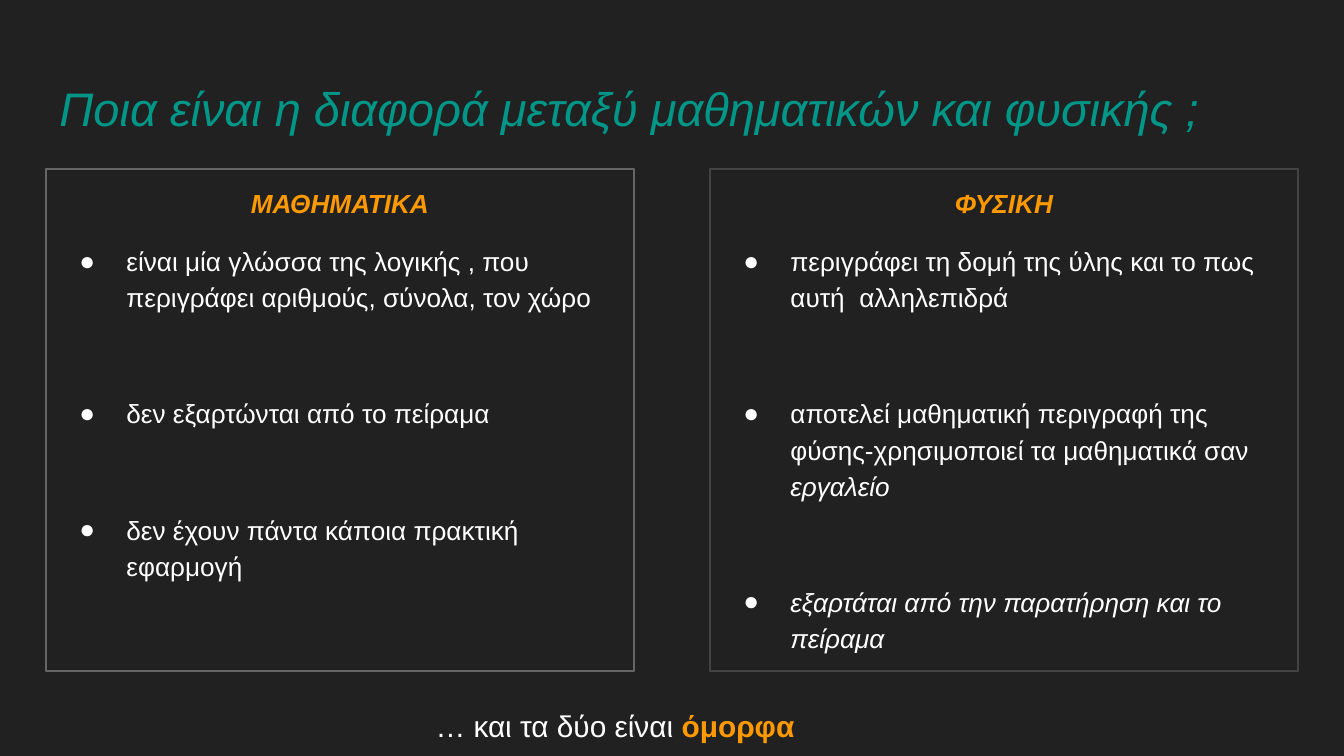
from pptx import Presentation
from pptx.dml.color import RGBColor
from pptx.enum.text import MSO_ANCHOR, MSO_AUTO_SIZE, PP_ALIGN
from pptx.oxml.ns import qn
from pptx.util import Pt
from lxml import etree

CENTER, LEFT = PP_ALIGN.CENTER, PP_ALIGN.LEFT
TOP, NO_FIT = MSO_ANCHOR.TOP, MSO_AUTO_SIZE.NONE
PX = 914400 / 134.4  # EMU per px
COLORS = {"bg": "212121", "title": "009688", "accent": "FF9900", "text": "FFFFFF",
          "math": "666666", "physics": "434343"}


def place(s, x, y, w, h):
    """Set position in px, and the shared text frame settings."""
    s.left, s.top, s.width, s.height = (round(v * PX) for v in (x, y, w, h))
    tf = s.text_frame
    tf.word_wrap, tf.auto_size, tf.vertical_anchor = True, NO_FIT, TOP
    tf.margin_left = tf.margin_right = tf.margin_top = tf.margin_bottom = round(13.44 * PX)
    return tf


def style(r, size, color, bold=False, italic=False):
    r.font.name, r.font.size = "Arial", Pt(size)
    r.font.bold, r.font.italic = bold, italic
    r.font.color.rgb = RGBColor.from_string(COLORS[color])


prs = Presentation()
prs.slide_width, prs.slide_height = round(1344 * PX), round(756 * PX)
slide = prs.slides.add_slide(prs.slide_layouts[3])
slide.background.fill.solid()
slide.background.fill.fore_color.rgb = RGBColor.from_string(COLORS["bg"])

# Title
tf = place(slide.shapes.title, 46, 66, 1252, 84)
tf.text = "Ποια είναι η διαφορά μεταξύ μαθηματικών και φυσικής ;"
tf.paragraphs[0].alignment = LEFT
style(tf.paragraphs[0].runs[0], 25.2, "title", italic=True)

# Two framed columns: each bullet is a list of (text, italic) runs
columns = [
    (1, 46, "math", "ΜΑΘΗΜΑΤΙΚΑ", [
        [("είναι μία γλώσσα της λογικής , που περιγράφει αριθμούς, σύνολα, τον χώρο", False)],
        [("δεν εξαρτώνται από το πείραμα", False)],
        [("δεν έχουν πάντα κάποια πρακτική εφαρμογή", False)],
    ]),
    (2, 710, "physics", "ΦΥΣΙΚΗ", [
        [("περιγράφει τη δομή της ύλης και το πως αυτή  αλληλεπιδρά", False)],
        [("αποτελεί μαθηματική περιγραφή της φύσης-χρησιμοποιεί τα μαθηματικά σαν ", False),
         ("εργαλείο", True)],
        [("εξαρτάται από την παρατήρηση και το πείραμα", True)],
    ]),
]
for idx, x, border, heading, bullets in columns:
    s = slide.placeholders[idx]
    tf = place(s, x, 169, 588, 502)
    s.line.color.rgb = RGBColor.from_string(COLORS[border])
    s.line.width = Pt(0.75)

    # Heading without bullet
    tf.text = heading
    p = tf.paragraphs[0]
    p.alignment, p.line_spacing, p.space_before = CENTER, 1.15, Pt(0)
    pPr = p._p.get_or_add_pPr()
    pPr.set("marL", "0")
    pPr.set("indent", "0")
    etree.SubElement(pPr, qn("a:buNone"))
    style(p.runs[0], 14, "accent", bold=True, italic=True)

    # Bullets, widely spaced after the first
    for i, runs in enumerate(bullets):
        p = tf.add_paragraph()
        p.line_spacing, p.space_before = 1.15, Pt(43 if i else 12)
        pPr = p._p.get_or_add_pPr()
        pPr.set("marL", str(round(67 * PX)))
        pPr.set("indent", str(round(-47 * PX)))
        clr = etree.SubElement(pPr, qn("a:buClr"))
        etree.SubElement(clr, qn("a:srgbClr"), val=COLORS["text"])
        etree.SubElement(pPr, qn("a:buFont"), typeface="Arial")
        etree.SubElement(pPr, qn("a:buChar"), char="●")
        for text, italic in runs:
            r = p.add_run()
            r.text = text
            style(r, 14, "text", italic=italic)

# Closing line
tf = place(slide.shapes.add_textbox(0, 0, 0, 0), 180, 694, 870, 63)
p = tf.paragraphs[0]
p.alignment = CENTER
for text, color, bold in [("… και τα δύο είναι ", "text", False), ("όμορφα", "accent", True)]:
    r = p.add_run()
    r.text = text
    style(r, 16, color, bold=bold)

prs.save("out.pptx")
